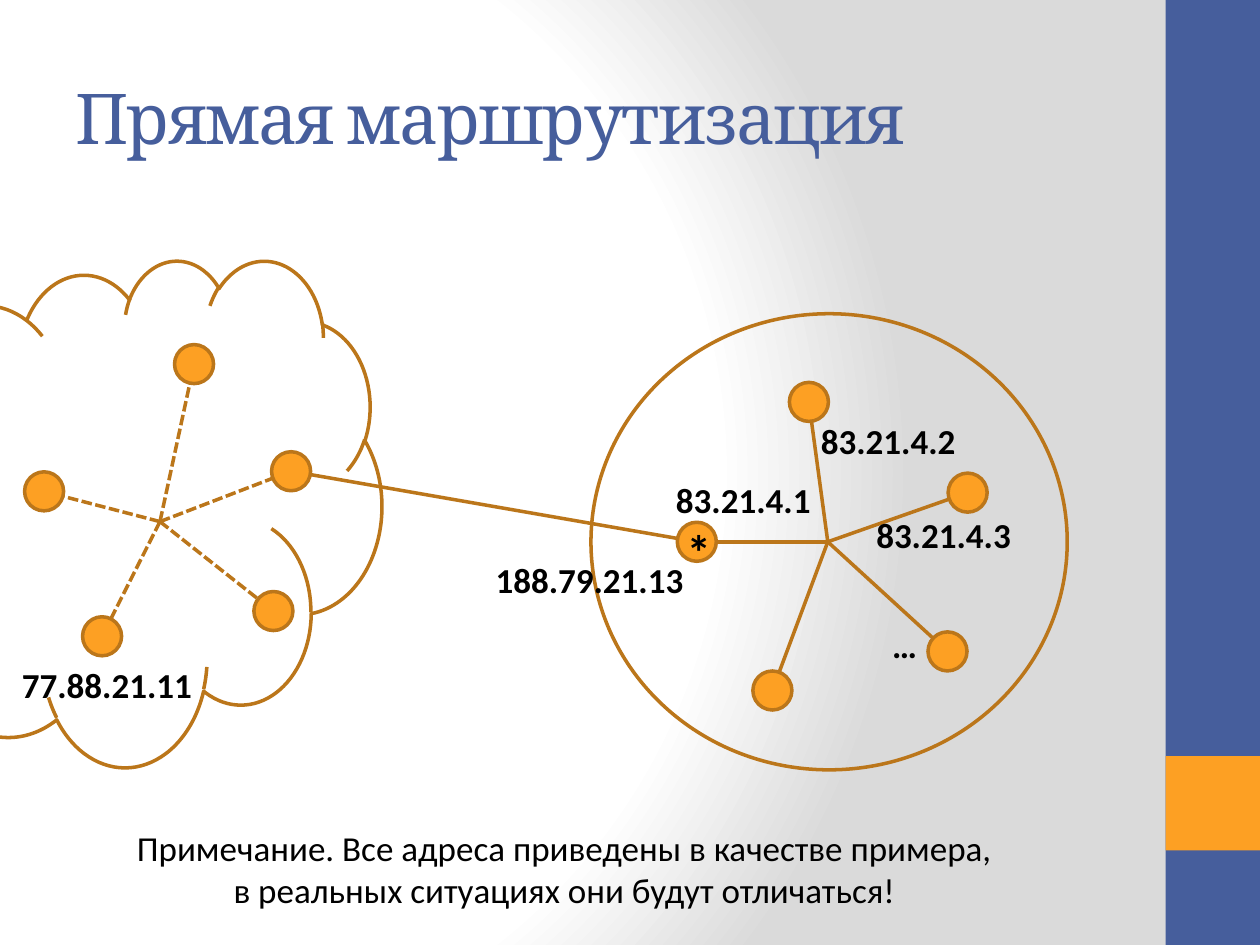
from dataclasses import dataclass

from pptx import Presentation
from pptx.dml.color import RGBColor
from pptx.enum.dml import MSO_LINE
from pptx.enum.shapes import MSO_CONNECTOR, MSO_SHAPE as Shape
from pptx.enum.text import MSO_ANCHOR as Anchor, MSO_AUTO_SIZE as AutoSize, PP_ALIGN as Align
from pptx.oxml import parse_xml
from pptx.oxml.ns import nsdecls, qn
from pptx.util import Inches, Pt


@dataclass(frozen=True)
class Theme:
    blue: str = "465E9C"
    orange: str = "FDA023"
    outline: str = "BB761A"
    black: str = "000000"
    white: str = "FFFFFF"
    gray: str = "DADADA"
    heading_font: str = "Cambria"
    body_font: str = "Calibri"
    title_size: int = 40
    star_size: int = 28
    body_size: int = 20
    line_width: int = 2


NODE_SIZE = 0.31
LABEL_SIZE = (1.96, 0.44)

CLOUD_HUB = (1.27, 4.14)
GATEWAY = (2.31, 3.74)
CLOUD_NODES = [(1.54, 2.89), (2.17, 4.85), (0.81, 5.05), (0.35, 3.9), GATEWAY]

LOCAL_HUB = (6.57, 4.3)
ROUTER = (5.53, 4.3)
LOCAL_NODES = [(6.42, 3.19), (7.68, 3.91), (7.52, 5.17), (6.13, 5.48), ROUTER]

ADDRESSES = [
    ("77.88.21.11", -0.13, 5.22),
    ("188.79.21.13", 3.7, 4.38),
    ("83.21.4.1", 4.92, 3.75),
    ("83.21.4.2", 6.07, 3.28),
    ("83.21.4.3", 6.51, 4.03),
    ("…", 6.2, 4.9),
]


class Painter:
    def __init__(self, page, theme):
        self.page = page
        self.theme = theme

    def background(self):
        """Fill the page with a radial gradient centred left of the middle."""
        theme = self.theme
        self.page.background.fill.solid()
        solid = next(self.page.element.iter(qn("a:solidFill")))
        stops = "".join(
            f'<a:gs pos="{position}"><a:srgbClr val="{color}"/></a:gs>'
            for position, color in ((0, theme.white), (75000, theme.white), (100000, theme.gray))
        )
        gradient = parse_xml(
            f'<a:gradFill {nsdecls("a")} rotWithShape="1"><a:gsLst>{stops}</a:gsLst>'
            '<a:path path="circle"><a:fillToRect l="20000" t="50000" r="100000" b="50000"/>'
            "</a:path></a:gradFill>"
        )
        solid.getparent().replace(solid, gradient)

    def shape(self, kind, left, top, width, height, fill=None, line=None):
        shape = self.page.shapes.add_shape(
            kind, Inches(left), Inches(top), Inches(width), Inches(height))
        shape.shadow.inherit = False
        if fill:
            shape.fill.solid()
            shape.fill.fore_color.rgb = RGBColor.from_string(fill)
        else:
            shape.fill.background()
        if line:
            shape.line.color.rgb = RGBColor.from_string(line)
            shape.line.width = Pt(self.theme.line_width)
        else:
            shape.line.fill.background()

    def node(self, center):
        x, y = center
        self.shape(Shape.OVAL, x - NODE_SIZE / 2, y - NODE_SIZE / 2, NODE_SIZE, NODE_SIZE,
                   fill=self.theme.orange, line=self.theme.outline)

    def link(self, start, end, dashed=False):
        link = self.page.shapes.add_connector(
            MSO_CONNECTOR.STRAIGHT, *(Inches(value) for value in (*start, *end)))
        link.line.color.rgb = RGBColor.from_string(self.theme.outline)
        link.line.width = Pt(self.theme.line_width)
        if dashed:
            link.line.dash_style = MSO_LINE.SQUARE_DOT
        properties = link.element.find(qn("p:spPr"))
        properties.append(parse_xml(f'<a:effectLst {nsdecls("a")}/>'))

    def star(self, hub, nodes, dashed=False):
        """Join every node of a network to its hub."""
        for node in nodes:
            self.link(hub, node, dashed)

    def text(self, text, left, top, width, height, *, size=None, font=None, color=None,
             bold=False, align=Align.CENTER, anchor=Anchor.TOP, spacing=None, grow=True):
        theme = self.theme
        box = self.page.shapes.add_textbox(
            Inches(left), Inches(top), Inches(width), Inches(height))
        frame = box.text_frame
        frame.word_wrap = True
        frame.auto_size = AutoSize.SHAPE_TO_FIT_TEXT if grow else AutoSize.NONE
        frame.vertical_anchor = anchor
        para = frame.paragraphs[0]
        para.alignment = align
        span = para.add_run()
        span.text = text
        span.font.name = font or theme.body_font
        span.font.size = Pt(size or theme.body_size)
        span.font.bold = bold
        span.font.color.rgb = RGBColor.from_string(color or theme.black)
        if spacing is not None:
            span.font._element.set("spc", str(spacing * 100))


def main():
    deck = Presentation()
    deck.slide_width, deck.slide_height = Inches(10), Inches(7.5)
    theme = Theme()
    painter = Painter(deck.slides.add_slide(deck.slide_layouts[6]), theme)

    painter.background()
    painter.shape(Shape.RECTANGLE, 9.25, 0, 0.75, 7.5, fill=theme.blue)
    painter.shape(Shape.RECTANGLE, 9.25, 6, 0.75, 0.75, fill=theme.orange)

    painter.star(CLOUD_HUB, CLOUD_NODES, dashed=True)
    painter.link(ROUTER, GATEWAY)
    painter.star(LOCAL_HUB, LOCAL_NODES)

    painter.text("Прямая маршрутизация", 0.5, 0.3, 8.33, 1.25, size=theme.title_size,
                 font=theme.heading_font, color=theme.blue, align=Align.LEFT,
                 anchor=Anchor.MIDDLE, spacing=-1, grow=False)

    painter.shape(Shape.OVAL, 4.69, 2.49, 3.78, 3.62, line=theme.outline)
    painter.shape(Shape.CLOUD, -1.14, 2.06, 4.17, 4.02, line=theme.outline)
    for center in LOCAL_NODES + CLOUD_NODES:
        painter.node(center)

    for address, left, top in ADDRESSES:
        painter.text(address, left, top, *LABEL_SIZE, bold=True)
    painter.text("*", 5.34, 4.09, 0.41, 0.57, size=theme.star_size, bold=True)
    painter.text("Примечание. Все адреса приведены в качестве примера, "
                 "в реальных ситуациях они будут отличаться!", 0.94, 6.51, 7.08, 0.77)

    deck.save("out.pptx")


if __name__ == "__main__":
    main()
